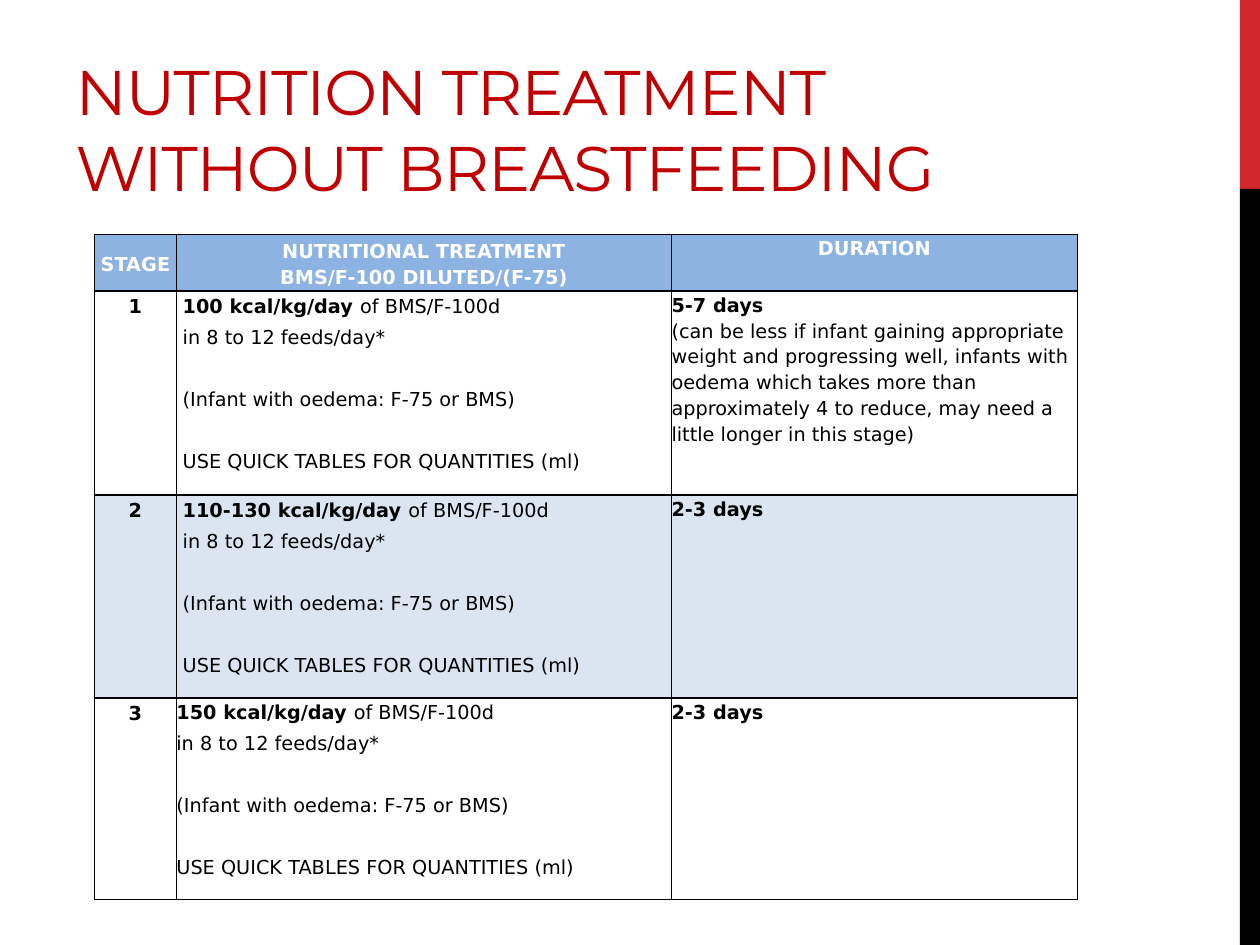
from lxml.etree import SubElement
from pptx import Presentation
from pptx.dml.color import RGBColor
from pptx.enum.shapes import MSO_SHAPE
from pptx.enum.text import MSO_ANCHOR, MSO_AUTO_SIZE, PP_ALIGN
from pptx.oxml.ns import qn
from pptx.util import Inches, Pt

# Content: a cell is a list of paragraphs, a paragraph a list of (text, bold)
TITLE = "NUTRITION TREATMENT WITHOUT BREASTFEEDING"
HEADERS = [
    ["STAGE"],
    ["NUTRITIONAL TREATMENT", "BMS/F-100 DILUTED/(F-75)"],
    ["DURATION"],
]
STAGES = [
    ("1", "100", "5-7 days",
     "(can be less if infant gaining appropriate weight and progressing well, "
     "infants with oedema which takes more than approximately 4 to reduce, "
     "may need a little longer in this stage)"),
    ("2", "110-130", "2-3 days", None),
    ("3", "150", "2-3 days", None),
]
FEEDING_LINES = [
    "in 8 to 12 feeds/day*",
    "(Infant with oedema: F-75 or BMS)",
    "USE QUICK TABLES FOR QUANTITIES (ml)",
]

# Layout and style
SLIDE_WIDTH, SLIDE_HEIGHT = 10, 7.5
BAR_WIDTH = 0.16
BAR_PARTS = [("D1282E", 0.2), ("000000", 0.8)]  # colour, share of the height
TABLE_LEFT, TABLE_TOP = 0.75, 1.86
COLUMNS = [0.65, 3.93, 3.22]
ROWS = [0.45, 1.62, 1.61, 1.6]
HEADER_FILL, BAND_FILL = "8DB3E2", "DBE5F1"
# Cell insets: left, top, right, bottom; the narrow stage column needs less
PADDED, NARROW, FLUSH = (0.05, 0.01, 0.05, 0), (0.02, 0.01, 0.02, 0), (0, 0, 0, 0)
HEADER_STYLES = [
    (NARROW, MSO_ANCHOR.MIDDLE),
    (PADDED, MSO_ANCHOR.MIDDLE),
    (FLUSH, MSO_ANCHOR.TOP),
]
LINE_GAP, GROUP_GAP = 3, 20.7  # points before a line, before a new group


def rgb(value):
    return RGBColor.from_string(value)


def add_borders(cell):
    properties = cell._tc.get_or_add_tcPr()
    for side in ("a:lnL", "a:lnR", "a:lnT", "a:lnB"):
        line = SubElement(properties, qn(side), w=str(Pt(1)))
        fill = SubElement(line, qn("a:solidFill"))
        SubElement(fill, qn("a:srgbClr"), val="000000")


def fill_cell(cell, paragraphs, fill=None, color="000000", align=PP_ALIGN.LEFT,
              insets=FLUSH, anchor=MSO_ANCHOR.TOP, gaps=()):
    add_borders(cell)
    if fill:
        cell.fill.solid()
        cell.fill.fore_color.rgb = rgb(fill)
    else:
        cell.fill.background()
    (cell.margin_left, cell.margin_top,
     cell.margin_right, cell.margin_bottom) = map(Inches, insets)
    cell.vertical_anchor = anchor
    frame = cell.text_frame
    for index, runs in enumerate(paragraphs):
        paragraph = frame.add_paragraph() if index else frame.paragraphs[0]
        paragraph.alignment = align
        paragraph.line_spacing = 1.15
        if gaps:
            paragraph.space_before = Pt(gaps[index])
        for text, bold in runs:
            run = paragraph.add_run()
            run.text = text
            run.font.name = "DejaVu Sans"
            run.font.size = Pt(11)
            run.font.bold = bold
            run.font.color.rgb = rgb(color)


presentation = Presentation()
presentation.slide_width = Inches(SLIDE_WIDTH)
presentation.slide_height = Inches(SLIDE_HEIGHT)
slide = presentation.slides.add_slide(presentation.slide_layouts[5])

# Side bar
bar_top = 0
for color, share in BAR_PARTS:
    height = share * SLIDE_HEIGHT
    bar = slide.shapes.add_shape(
        MSO_SHAPE.RECTANGLE, Inches(SLIDE_WIDTH - BAR_WIDTH), Inches(bar_top),
        Inches(BAR_WIDTH), Inches(height))
    bar.shadow.inherit = False
    bar.fill.solid()
    bar.fill.fore_color.rgb = rgb(color)
    bar.line.fill.background()
    bar_top += height

# Title
title = slide.shapes.title
title.left, title.top = Inches(0.5), Inches(0.17)
title.width, title.height = Inches(8.51), Inches(1.5)
title.text_frame.word_wrap = True
title.text_frame.auto_size = MSO_AUTO_SIZE.NONE
title.text_frame.vertical_anchor = MSO_ANCHOR.BOTTOM
paragraph = title.text_frame.paragraphs[0]
paragraph.alignment = PP_ALIGN.LEFT
run = paragraph.add_run()
run.text = TITLE
run.font.name = "Montserrat"
run.font.size = Pt(36)
run.font.color.rgb = rgb("C00000")
run.font._element.set("spc", "-60")

# Table grid
table = slide.shapes.add_table(
    len(ROWS), len(COLUMNS), Inches(TABLE_LEFT), Inches(TABLE_TOP),
    Inches(sum(COLUMNS)), Inches(sum(ROWS))).table
table.first_row = table.horz_banding = False
for column, width in zip(table.columns, COLUMNS):
    column.width = Inches(width)
for row, height in zip(table.rows, ROWS):
    row.height = Inches(height)

# Header row
for index, (lines, (insets, anchor)) in enumerate(zip(HEADERS, HEADER_STYLES)):
    fill_cell(table.cell(0, index), [[(line, True)] for line in lines],
              HEADER_FILL, "FFFFFF", PP_ALIGN.CENTER, insets, anchor)

# Stage rows
for row, (stage, energy, duration, remark) in enumerate(STAGES, start=1):
    fill = BAND_FILL if row % 2 == 0 else None
    treatment = [[(f"{energy} kcal/kg/day ", True), ("of BMS/F-100d", False)]]
    treatment += [[(line, False)] for line in FEEDING_LINES]
    durations = [[(duration, True)]]
    if remark:
        durations.append([(remark, False)])
    fill_cell(table.cell(row, 0), [[(stage, True)]], fill,
              align=PP_ALIGN.CENTER, insets=NARROW)
    fill_cell(table.cell(row, 1), treatment, fill,
              insets=FLUSH if row == len(STAGES) else PADDED,
              gaps=(LINE_GAP, LINE_GAP, GROUP_GAP, GROUP_GAP))
    fill_cell(table.cell(row, 2), durations, fill)

presentation.save("out.pptx")
